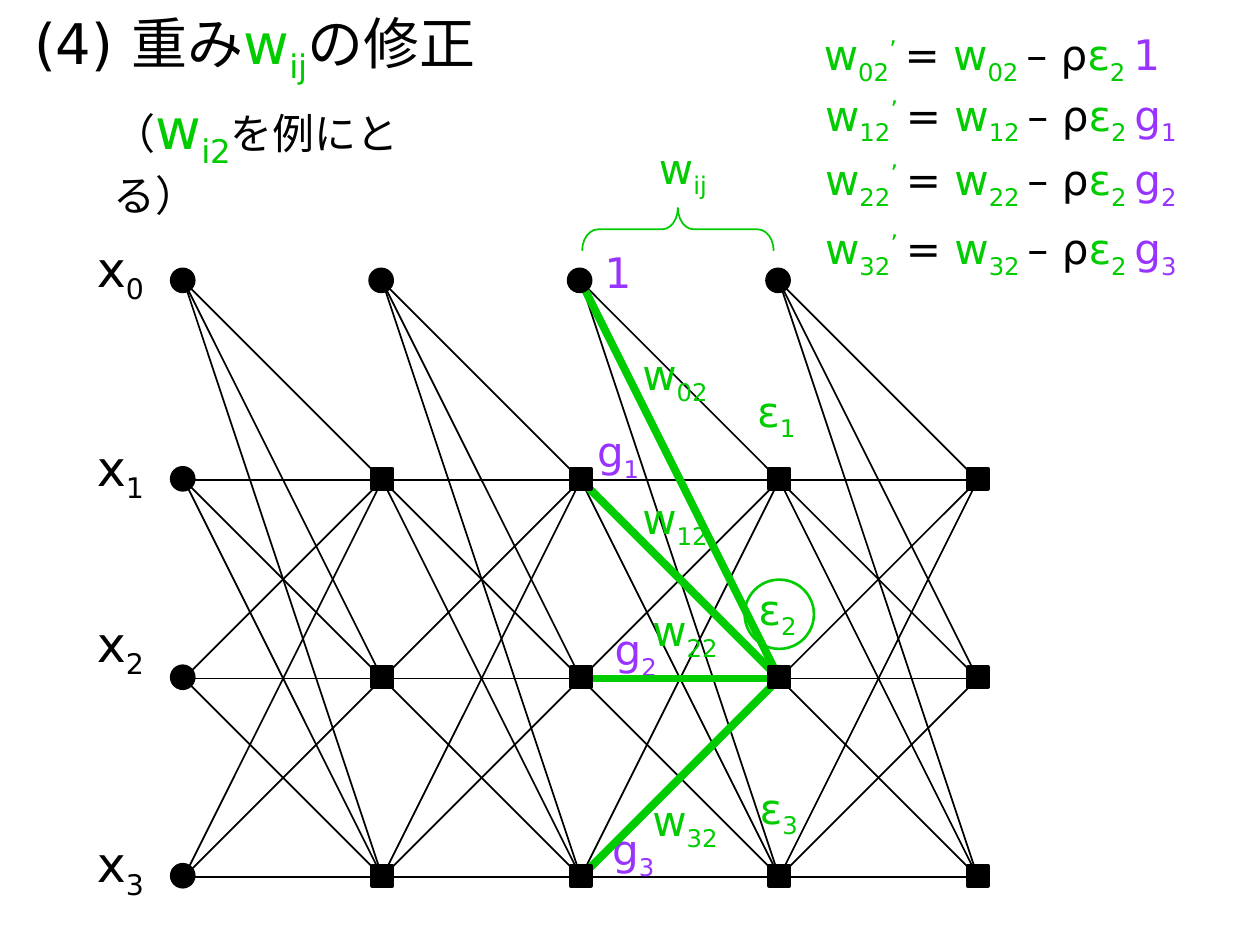
import pptx
import pptx.util
import pptx.dml.color
import pptx.enum.shapes
import pptx.enum.text
import pptx.oxml.ns
from lxml import etree

Inches = pptx.util.Inches
Pt = pptx.util.Pt
SHAPES = pptx.enum.shapes.MSO_SHAPE

FONT = "DejaVu Sans"
BLACK, WHITE, GREEN, PURPLE = "000000", "FFFFFF", "00CC00", "9933FF"
SUB, SUPER = -25, 30

TITLE = [("(4) 重み", BLACK), ("w", GREEN), ("ij", GREEN, SUB), ("の修正", BLACK)]
EXAMPLE = [("（", BLACK, 0, 24), ("w", GREEN, 0, 32), ("i2", GREEN, SUB, 32),
           ("を例にとる）", BLACK, 0, 24)]
EQUATIONS = [
    ("02", "1", "", 6.44, 0.18),
    ("12", "g", "1", 6.45, 0.66),
    ("22", "g", "2", 6.45, 1.17),
    ("32", "g", "3", 6.45, 1.72),
]
INPUTS = [("0", 1.84, None), ("1", 3.42, WHITE), ("2", 4.82, WHITE), ("3", 6.57, WHITE)]
LABELS = [
    ("ε", "1", GREEN, 5.91, 3.01, 0.68),
    ("ε", "2", GREEN, 5.92, 4.58, 0.68),
    ("ε", "3", GREEN, 5.93, 6.16, 0.68),
    ("1", "", PURPLE, 4.70, 1.91, 0.41),
    ("g", "1", PURPLE, 4.64, 3.33, 0.55),
    ("g", "2", PURPLE, 4.78, 4.90, 0.55),
    ("g", "3", PURPLE, 4.76, 6.49, 0.55),
    ("w", "02", GREEN, 5.00, 2.72, 0.76),
    ("w", "12", GREEN, 5.00, 3.86, 0.76),
    ("w", "22", GREEN, 5.08, 4.75, 0.76),
    ("w", "32", GREEN, 5.08, 6.26, 0.76),
]

PITCH = (7.76 - 1.46) / 4
COLUMNS = [1.46 + PITCH * i for i in range(5)]
ROWS = [6.96 - PITCH * i for i in (3, 2, 1, 0)]
CIRCLE, SQUARE = 0.19, 0.16


def rgb(colour):
    return pptx.dml.color.RGBColor.from_string(colour)


def write(box, parts, size=24, inset=None, wrap=False):
    frame = box.text_frame
    frame.word_wrap = wrap
    frame.auto_size = pptx.enum.text.MSO_AUTO_SIZE.SHAPE_TO_FIT_TEXT
    frame.vertical_anchor = pptx.enum.text.MSO_ANCHOR.TOP
    if inset is not None:
        frame.margin_left = frame.margin_right = Inches(inset)
        frame.margin_top = frame.margin_bottom = Inches(inset)
    paragraph = frame.paragraphs[0]
    paragraph.alignment = pptx.enum.text.PP_ALIGN.LEFT
    for words, colour, *more in parts:
        baseline, run_size = (more + [0, size][len(more):])
        run = paragraph.add_run()
        run.text = words
        run.font.name = FONT
        run.font.size = Pt(run_size)
        run.font.color.rgb = rgb(colour)
        if baseline:
            run.font._element.set("baseline", str(baseline * 1000))


def add_text(slide, parts, left, top, width, height, fill=None, **form):
    box = slide.shapes.add_textbox(*map(Inches, (left, top, width, height)))
    if fill:
        box.fill.solid()
        box.fill.fore_color.rgb = rgb(fill)
    write(box, parts, **form)


def add_line(slide, start, end, colour=BLACK, weight=1):
    line = slide.shapes.add_connector(
        pptx.enum.shapes.MSO_CONNECTOR.STRAIGHT, *map(Inches, (*start, *end)))
    line.line.color.rgb = rgb(colour)
    line.line.width = Pt(weight)
    etree.SubElement(line._element.spPr, pptx.oxml.ns.qn("a:effectLst"))


def add_figure(slide, kind, left, top, width, height, colour, weight, fill=None):
    figure = slide.shapes.add_shape(kind, *map(Inches, (left, top, width, height)))
    figure.shadow.inherit = False
    figure.line.color.rgb = rgb(colour)
    figure.line.width = Pt(weight)
    if fill:
        figure.fill.solid()
        figure.fill.fore_color.rgb = rgb(fill)
    else:
        figure.fill.background()
    return figure


def add_node(slide, column, row):
    x, y = COLUMNS[column], ROWS[row] - 0.01
    if column == 0 or row == 0:
        kind, size, weight = SHAPES.OVAL, CIRCLE, 1
        x -= 0.01
    else:
        kind, size, weight = SHAPES.RECTANGLE, SQUARE, 2.25
    add_figure(slide, kind, x - size / 2, y - size / 2, size, size, BLACK, weight, BLACK)


def equation(index, factor, factor_index):
    parts = [("w", GREEN), (index, GREEN, SUB), ("’ ", GREEN, SUPER), ("=", BLACK),
             (" w", GREEN), (index + " ", GREEN, SUB), ("– ρ", BLACK), ("ε", GREEN),
             ("2 ", GREEN, SUB), (factor, PURPLE)]
    return parts + ([(factor_index, PURPLE, SUB)] if factor_index else [])


def main():
    deck = pptx.Presentation()
    deck.slide_width, deck.slide_height = Inches(10), Inches(7.5)
    slide = deck.slides.add_slide(deck.slide_layouts[5])

    title = slide.shapes.title
    title.left, title.top, title.width, title.height = map(Inches, (0.27, 0.07, 4.07, 0.53))
    write(title, TITLE, size=32, inset=0, wrap=True)
    add_text(slide, EXAMPLE, 0.9, 0.74, 2.88, 0.53, inset=0, wrap=True)

    for column in range(4):
        for source in range(4):
            for target in range(1, 4):
                add_line(slide, (COLUMNS[column], ROWS[source]),
                         (COLUMNS[column + 1], ROWS[target]))

    for index, top, fill in INPUTS:
        add_text(slide, [("x", BLACK), (index, BLACK, SUB)], 0.67, top, 0.6, 0.57,
                 fill=fill, size=28)
    for index, factor, factor_index, left, top in EQUATIONS:
        add_text(slide, equation(index, factor, factor_index), left, top, 3.46, 0.5, wrap=True)
    for letter, index, colour, left, top, width in LABELS:
        parts = [(letter, colour)] + ([(index, colour, SUB)] if index else [])
        add_text(slide, parts, left, top, width, 0.5)

    add_text(slide, [("w", GREEN), ("ij", GREEN, SUB)], 5.23, 1.13, 0.41, 0.4, inset=0)
    brace = add_figure(slide, SHAPES.RIGHT_BRACE, 5.21, 1.06, 0.34, 1.52, GREEN, 1)
    brace.rotation = 270
    brace.adjustments[0], brace.adjustments[1] = 0.37, 0.5
    add_figure(slide, SHAPES.OVAL, 5.91, 4.6, 0.55, 0.55, GREEN, 1.5)

    for row in ROWS:
        add_line(slide, (COLUMNS[2], row), (COLUMNS[3], ROWS[2]), GREEN, 4.5)
    for column in range(5):
        for row in range(1 if column == 4 else 0, 4):
            add_node(slide, column, row)

    deck.save("out.pptx")


if __name__ == "__main__":
    main()
